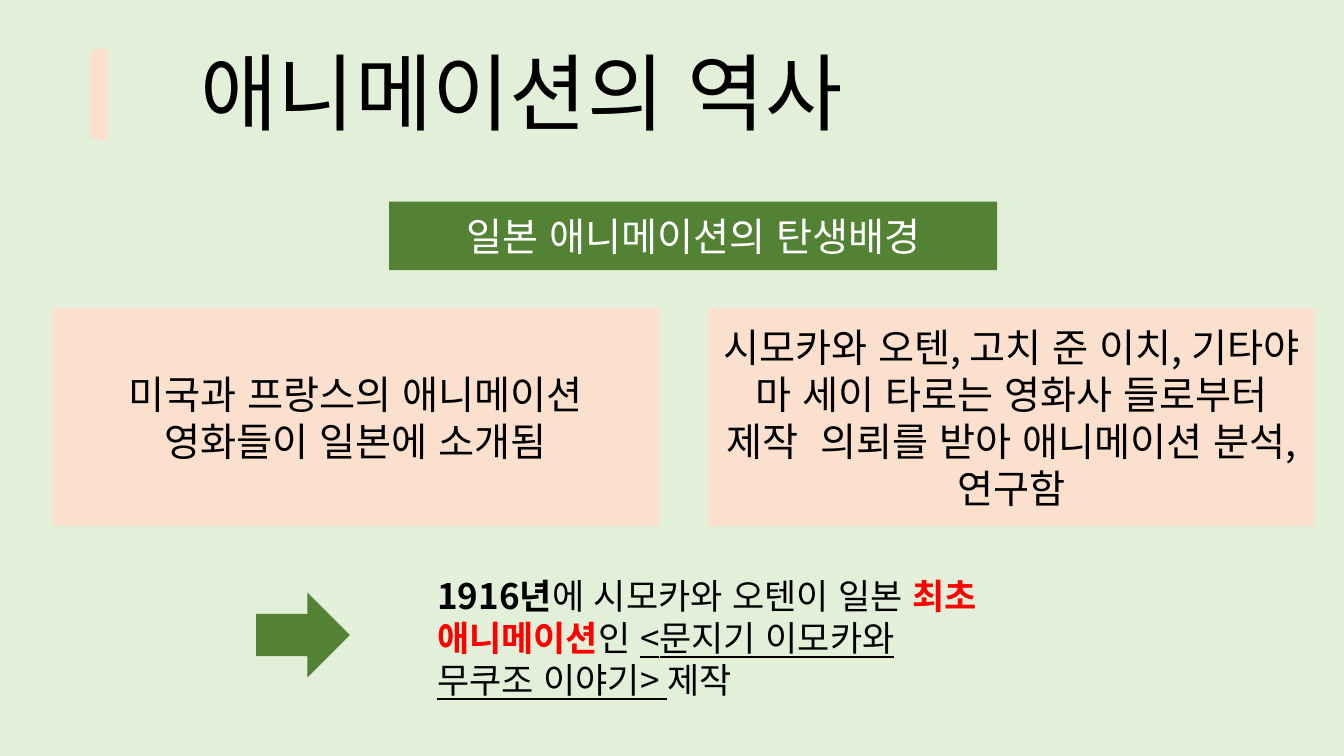
from lxml import etree
from pptx import Presentation
from pptx.dml.color import RGBColor
from pptx.enum.lang import MSO_LANGUAGE_ID
from pptx.enum.shapes import MSO_SHAPE
from pptx.enum.text import MSO_ANCHOR, MSO_AUTO_SIZE, PP_ALIGN
from pptx.oxml.ns import qn
from pptx.util import Inches, Pt

RECTANGLE, RIGHT_ARROW = MSO_SHAPE.RECTANGLE, MSO_SHAPE.RIGHT_ARROW
CENTER, LEFT = PP_ALIGN.CENTER, PP_ALIGN.LEFT
MIDDLE, BOTTOM = MSO_ANCHOR.MIDDLE, MSO_ANCHOR.BOTTOM
KOREAN = MSO_LANGUAGE_ID.KOREAN

FONT = "Noto Sans CJK KR"
MINT = RGBColor(0xE2, 0xF0, 0xD9)
PEACH = RGBColor(0xFB, 0xE0, 0xCD)
GREEN = RGBColor(0x54, 0x82, 0x35)
BLACK = RGBColor(0, 0, 0)
WHITE = RGBColor(0xFF, 0xFF, 0xFF)
RED = RGBColor(0xFF, 0, 0)


def add_span(para, text, size=28, color=BLACK, bold=False, underline=False):
    span = para.add_run()
    span.text = text
    font = span.font
    font.name, font.size, font.bold = FONT, Pt(size), bold
    font.underline = underline
    font.color.rgb = color
    font.language_id = KOREAN
    # East Asian typeface follows the Latin one
    east_asian = etree.Element(qn("a:ea"), typeface=FONT)
    span._r.rPr.find(qn("a:latin")).addnext(east_asian)


def add_block(page, left, top, width, height, fill, kind=RECTANGLE):
    block = page.shapes.add_shape(
        kind, Inches(left), Inches(top), Inches(width), Inches(height))
    block.shadow.inherit = False
    block.fill.solid()
    block.fill.fore_color.rgb = fill
    block.line.fill.background()
    return block


def add_label(page, text, left, top, width, height, fill, color=BLACK):
    frame = add_block(page, left, top, width, height, fill).text_frame
    frame.word_wrap = True
    frame.vertical_anchor = MIDDLE
    para = frame.paragraphs[0]
    para.alignment = CENTER
    add_span(para, text, color=color)


def add_heading(page, left, top, width, height):
    title = page.shapes.title
    title.left, title.top = Inches(left), Inches(top)
    title.width, title.height = Inches(width), Inches(height)
    frame = title.text_frame
    frame.word_wrap = True
    frame.auto_size = MSO_AUTO_SIZE.NONE
    frame.vertical_anchor = BOTTOM
    para = frame.paragraphs[0]
    para.alignment = CENTER
    para.line_spacing = 0.9
    add_span(para, " 애니메이션의 역사", size=60)
    # Accent bar
    add_block(page, left + 0.68, top + 0.08, 0.17, 0.9, PEACH)


def add_background_panels(page, left, top, width, height):
    panels = (
        "미국과 프랑스의 애니메이션 영화들이 일본에 소개됨",
        "시모카와 오텐, 고치 준 이치, 기타야 마 세이 타로는 영화사 "
        "들로부터 제작  의뢰를 받아 애니메이션 분석, 연구함",
    )
    panel_width = 6.02
    step = width - panel_width
    for index, text in enumerate(panels):
        add_label(page, text, left + index * step, top, panel_width, height, PEACH)


def add_conclusion(page, left, top, width, height):
    add_block(page, left, top + 0.23, 0.93, 0.84, GREEN, RIGHT_ARROW)
    text_offset = 1.7
    box = page.shapes.add_textbox(
        Inches(left + text_offset), Inches(top),
        Inches(width - text_offset), Inches(height))
    frame = box.text_frame
    frame.word_wrap = True
    frame.auto_size = MSO_AUTO_SIZE.SHAPE_TO_FIT_TEXT
    para = frame.paragraphs[0]
    para.alignment = LEFT
    spans = (
        ("1916년", {"bold": True}),
        ("에 시모카와 오텐이 일본 ", {}),
        ("최초 애니메이션", {"bold": True, "color": RED}),
        ("인 ", {}),
        ("<문지기 이모카와 무쿠조 이야기> ", {"underline": True}),
        ("제작", {}),
    )
    for text, style in spans:
        add_span(para, text, size=25, **style)


def main():
    deck = Presentation()
    deck.slide_width, deck.slide_height = Inches(13.33), Inches(7.5)
    page = deck.slides.add_slide(deck.slide_layouts[5])
    page.background.fill.solid()
    page.background.fill.fore_color.rgb = MINT

    add_heading(page, 0.22, 0.41, 9.67, 1.06)
    add_label(page, "일본 애니메이션의 탄생배경", 3.86, 2, 6.03, 0.68, GREEN, WHITE)
    add_background_panels(page, 0.52, 3.06, 12.52, 2.16)
    add_conclusion(page, 2.54, 5.65, 7.27, 1.36)
    deck.save("out.pptx")


if __name__ == "__main__":
    main()
